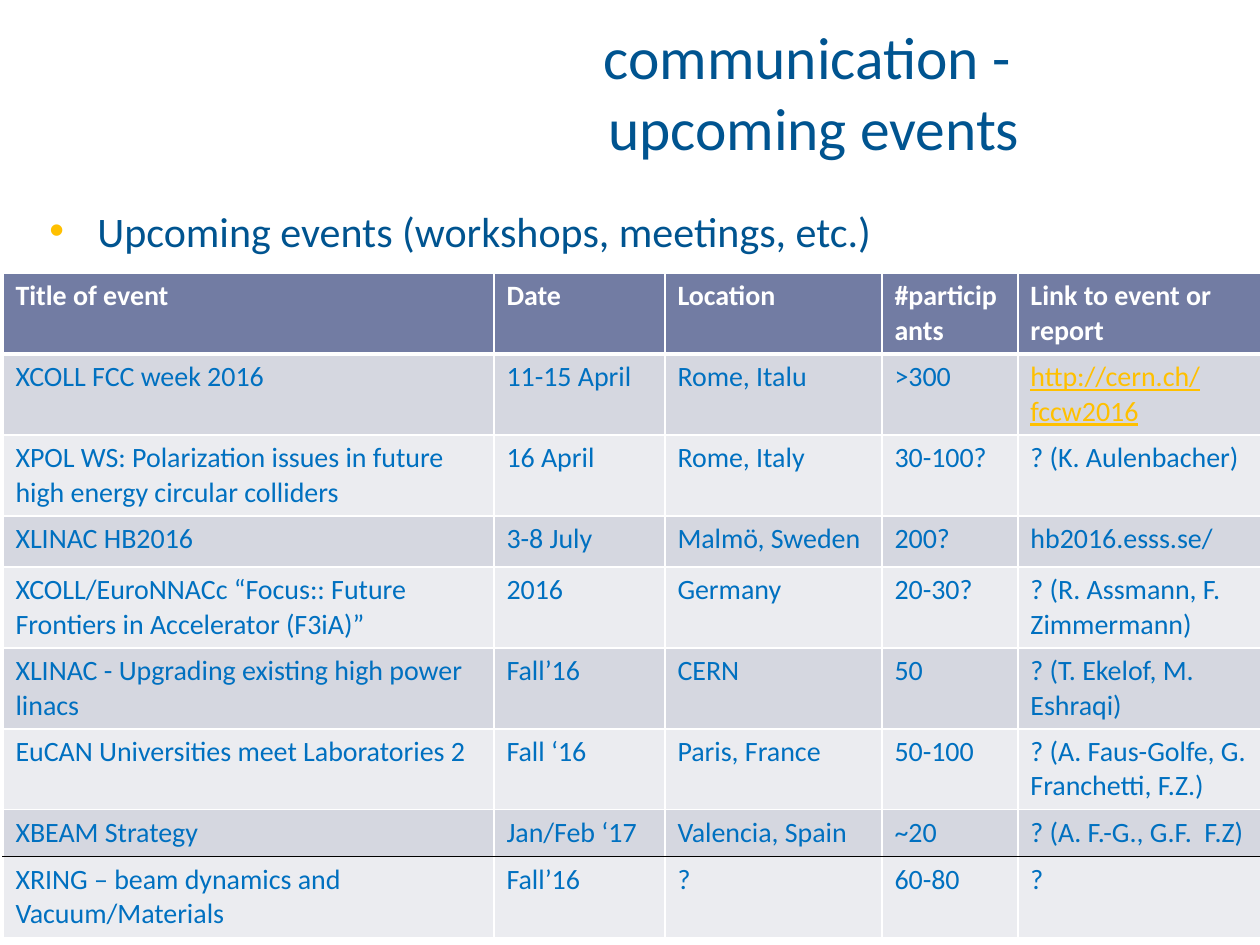
"""Build the slide listing upcoming events."""
from dataclasses import dataclass

from lxml import etree
from pptx import Presentation
from pptx import util as u
from pptx.dml.color import RGBColor
from pptx.enum import text
from pptx.oxml import ns

TITLE = "communication - \vupcoming events"
BULLET = "Upcoming events (workshops, meetings, etc.)"
HEADER = ("Title of event", "Date", "Location", "#participants", "Link to event or report")
LINK = "http://cern.ch/fccw2016"
EVENTS = [
    ("XCOLL FCC week 2016", "11-15 April", "Rome, Italu", ">300", LINK),
    ("XPOL WS: Polarization issues in future high energy circular colliders",
     "16 April", "Rome, Italy", "30-100?", "? (K. Aulenbacher)"),
    ("XLINAC HB2016", "3-8 July", "Malmö, Sweden", "200?", "hb2016.esss.se/"),
    ("XCOLL/EuroNNACc “Focus:: Future Frontiers in Accelerator (F3iA)”",
     "2016", "Germany", "20-30?", "? (R. Assmann, F. Zimmermann)"),
    ("XLINAC - Upgrading existing high power linacs",
     "Fall’16", "CERN", "50", "? (T. Ekelof, M. Eshraqi)"),
    ("EuCAN Universities meet Laboratories 2",
     "Fall ‘16", "Paris, France", "50-100", "? (A. Faus-Golfe, G. Franchetti, F.Z.)"),
    ("XBEAM Strategy", "Jan/Feb ‘17", "Valencia, Spain", "~20", "? (A. F.-G., G.F.  F.Z)"),
    ("XRING – beam dynamics and Vacuum/Materials", "Fall’16", "?", "60-80", "?"),
]
COLUMN_WIDTHS = (491, 171, 217, 136, 245)
ROW_HEIGHTS = (81, 81, 81, 51, 81, 81, 81, 47, 81)
RULED_ROW = 7


@dataclass(frozen=True)
class Theme:
    font: str = "Calibri"
    heading: str = "005490"
    accent: str = "FFC000"
    body: str = "0070C0"
    white: str = "FFFFFF"
    rule: str = "000000"
    header_fill: str = "727CA3"
    bands: tuple = ("D5D7E0", "EBECF0")
    title_size: int = 34
    bullet_size: int = 24
    table_size: int = 16


THEME = Theme()


def px(value):
    return u.Emu(value * 914400 // 126)


def add_run(paragraph, content, size, color, bold=False, underline=False):
    for index, line in enumerate(content.split("\v")):
        if index:
            paragraph.add_line_break()
        run = paragraph.add_run()
        run.text = line
        font = run.font
        font.name, font.size = THEME.font, u.Pt(size)
        font.bold, font.underline = bold, underline
        font.color.rgb = RGBColor.from_string(color)


def add_text_box(slide, box, anchor):
    frame = slide.shapes.add_textbox(*map(px, box)).text_frame
    frame.word_wrap = True
    frame.vertical_anchor = anchor
    return frame.paragraphs[0]


def add_bullet(paragraph, color, indent):
    properties = paragraph._p.get_or_add_pPr()
    properties.set("marL", str(px(indent)))
    properties.set("indent", str(-px(indent)))
    bullet_color = etree.SubElement(properties, ns.qn("a:buClr"))
    etree.SubElement(bullet_color, ns.qn("a:srgbClr"), val=color)
    etree.SubElement(properties, ns.qn("a:buFont"), typeface="Arial")
    etree.SubElement(properties, ns.qn("a:buChar"), char="•")


def add_border(cell, side, color, points):
    line = etree.SubElement(cell._tc.get_or_add_tcPr(), ns.qn(f"a:ln{side}"), w=str(u.Pt(points)))
    fill = etree.SubElement(line, ns.qn("a:solidFill"))
    etree.SubElement(fill, ns.qn("a:srgbClr"), val=color)


def style_cell(cell, row):
    above = THEME.rule if row == RULED_ROW + 1 else THEME.white
    below = THEME.rule if row == RULED_ROW else THEME.white
    add_border(cell, "L", THEME.white, 1)
    add_border(cell, "R", THEME.white, 1)
    add_border(cell, "T", above, 3 if row == 1 else 1)
    add_border(cell, "B", below, 3 if row == 0 else 1)
    fill = THEME.bands[(row - 1) % 2] if row else THEME.header_fill
    cell.fill.solid()
    cell.fill.fore_color.rgb = RGBColor.from_string(fill)


def add_event_table(slide, left, top):
    rows = [HEADER, *EVENTS]
    table = slide.shapes.add_table(
        len(rows), len(HEADER), px(left), px(top),
        px(sum(COLUMN_WIDTHS)), px(sum(ROW_HEIGHTS))).table
    for column, width in zip(table.columns, COLUMN_WIDTHS):
        column.width = px(width)
    for row, height in zip(table.rows, ROW_HEIGHTS):
        row.height = px(height)
    for row, values in enumerate(rows):
        for column, value in enumerate(values):
            cell = table.cell(row, column)
            style_cell(cell, row)
            is_link = value == LINK
            color = THEME.accent if is_link else THEME.body if row else THEME.white
            add_run(cell.text_frame.paragraphs[0], value, THEME.table_size, color,
                    bold=row == 0, underline=is_link)


def main():
    presentation = Presentation()
    presentation.slide_width, presentation.slide_height = px(1260), px(945)
    slide = presentation.slides.add_slide(presentation.slide_layouts[6])

    title = add_text_box(slide, (368, 21, 892, 141), text.MSO_ANCHOR.MIDDLE)
    title.alignment = text.PP_ALIGN.CENTER
    add_run(title, TITLE, THEME.title_size, THEME.heading)

    bullet = add_text_box(slide, (37, 199, 1187, 624), text.MSO_ANCHOR.TOP)
    add_bullet(bullet, THEME.accent, 48)
    add_run(bullet, BULLET, THEME.bullet_size, THEME.heading)

    add_event_table(slide, 3, 273)
    presentation.save("out.pptx")


if __name__ == "__main__":
    main()
